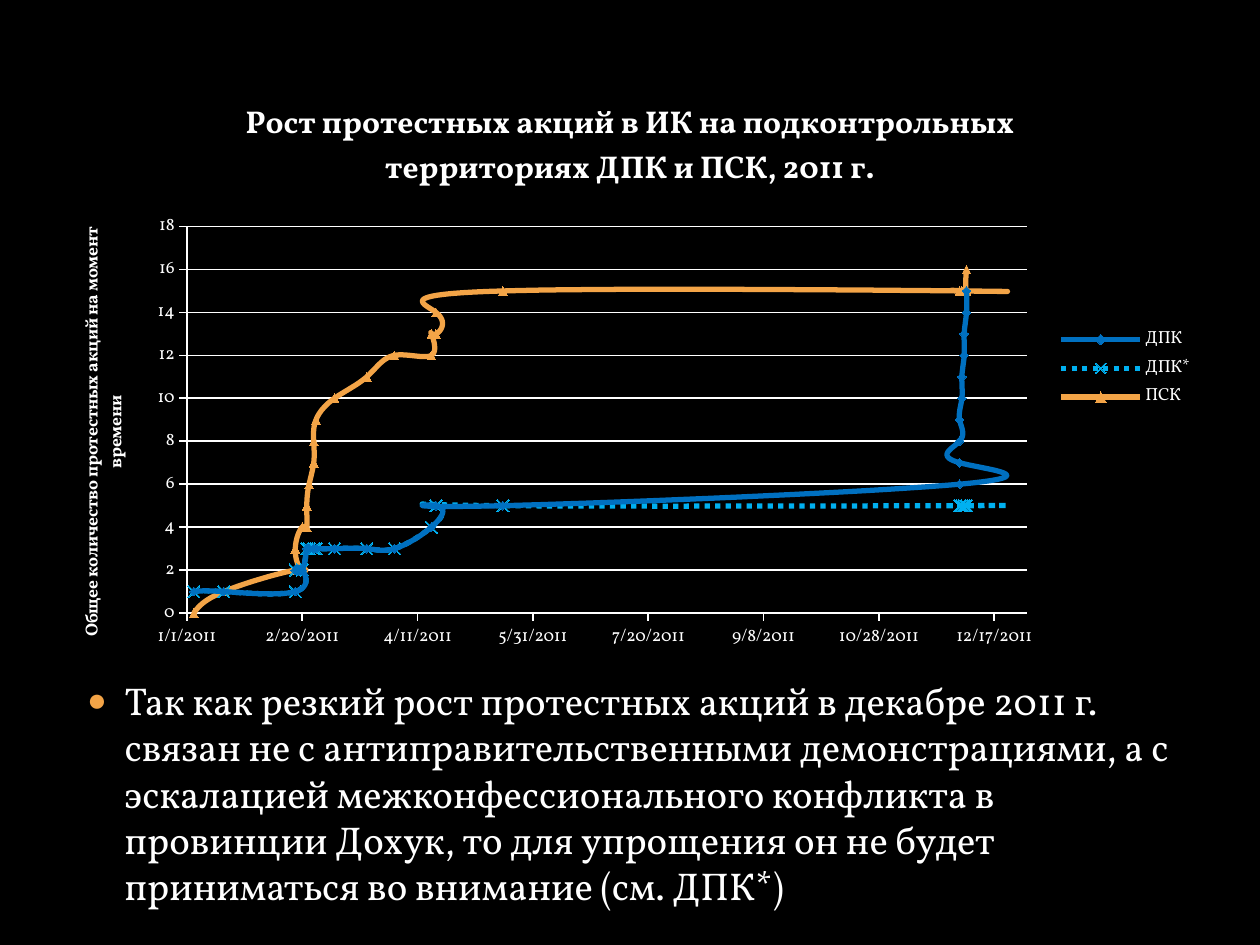
from lxml import etree
from pptx import Presentation
from pptx.chart.data import XyChartData
from pptx.dml.color import RGBColor
from pptx.enum.chart import (XL_CHART_TYPE as ChartType, XL_LEGEND_POSITION as LegendPosition,
                             XL_MARKER_STYLE as Marker, XL_TICK_MARK as TickMark)
from pptx.enum.dml import MSO_LINE as Dash
from pptx.enum.text import MSO_ANCHOR as Anchor, MSO_AUTO_SIZE as AutoSize
from pptx.oxml import parse_xml
from pptx.oxml.ns import nsdecls, qn
from pptx.util import Cm, Pt

# Content
FONT = "Vollkorn"
COLORS = {"background": "000000", "text": "FFFFFF", "kdp": "0070C0",
          "kdp_flat": "00B0F0", "puk": "F3A447"}
CHART_TITLE = "Рост протестных акций в ИК на подконтрольных территориях ДПК и ПСК, 2011 г."
AXIS_TITLE = "Общее количество протестных акций на момент времени"
COMMENT = ("Так как резкий рост протестных акций в декабре 2011 г. связан не с "
           "антиправительственными демонстрациями, а с эскалацией межконфессионального "
           "конфликта в провинции Дохук, то для упрощения он не будет приниматься "
           "во внимание (см. ДПК*)")

FIRST_DAY, LAST_DAY = 40544, 40908  # date serials within 2011
DAYS = [3, 16, 47, 50, 47, 50, 52, 52, 53, 55, 55, 56, 64, 78, 90, 106, 106, 108, 108, 137,
        335, 335, 335, 335, 336, 336, 337, 337, 338, 338, 338]
KDP_START = [1] * 3 + [2] * 3 + [3] * 9 + [4] * 2 + [5] * 3
SERIES = [  # name, values, colour, dash, marker, marker size
    ("ДПК", KDP_START + [6, 7, 8, 9, 10, 11, 12, 13, 14, 14, 15],
     "kdp", Dash.SOLID, Marker.DIAMOND, 5),
    ("ДПК*", KDP_START + [5] * 11, "kdp_flat", Dash.ROUND_DOT, Marker.X, 7),
    ("ПСК", [0, 1, 2, 2, 3, 4, 4, 5, 6, 7, 8, 9, 10, 11, 12, 12, 13, 13, 14] + [15] * 10 + [16] * 2,
     "puk", Dash.SOLID, Marker.TRIANGLE, 5),
]
PLOT_PERCENT = {"x": 11.53, "y": 25.8, "w": 72.9, "h": 66}


def color(name):
    return RGBColor.from_string(COLORS[name])


def style_font(font, size, bold=False):
    font.name, font.size, font.bold = FONT, Pt(size), bold
    font.color.rgb = color("text")


def style_line(line, name, width):
    line.color.rgb = color(name)
    line.width = Pt(width)


def set_title(owner, text, size):
    text_frame = owner.text_frame
    text_frame.text = text
    style_font(text_frame.paragraphs[0].runs[0].font, size, bold=True)


def place_plot_area(chart):
    plot_area = chart.plots[0]._element.getparent()
    for layout in plot_area.findall(qn("c:layout")):
        plot_area.remove(layout)
    modes = '<c:layoutTarget val="inner"/><c:xMode val="edge"/><c:yMode val="edge"/>'
    sizes = "".join(f'<c:{key} val="{value / 100}"/>' for key, value in PLOT_PERCENT.items())
    plot_area.insert(0, parse_xml(
        f'<c:layout {nsdecls("c")}><c:manualLayout>{modes}{sizes}</c:manualLayout></c:layout>'))


def add_protest_chart(slide):
    data = XyChartData()
    for name, values, *_ in SERIES:
        series = data.add_series(name)
        for day, value in zip(DAYS, values):
            series.add_data_point(FIRST_DAY + day, value)
    chart = slide.shapes.add_chart(ChartType.XY_SCATTER_SMOOTH, Cm(1.09), Cm(1.52),
                                   Cm(23.22), Cm(11.81), data).chart
    style_font(chart.font, 10)
    chart.has_title = True
    set_title(chart.chart_title, CHART_TITLE, 18)
    chart.chart_title.include_in_layout = False
    chart.has_legend = True
    chart.legend.position = LegendPosition.RIGHT
    chart.legend.include_in_layout = False
    chart.plots[0].vary_by_categories = False

    # Axes
    date_axis, count_axis = chart.category_axis, chart.value_axis
    for axis, low, high, step in ((date_axis, FIRST_DAY, LAST_DAY, 50), (count_axis, 0, 18, 2)):
        axis.minimum_scale, axis.maximum_scale, axis.major_unit = low, high, step
        axis.major_tick_mark, axis.minor_tick_mark = TickMark.OUTSIDE, TickMark.NONE
        style_line(axis.format.line, "text", 1)
        style_font(axis.tick_labels.font, 10)
    date_axis.has_major_gridlines = False
    date_axis.tick_labels.number_format = "m/d/yyyy"
    date_axis.tick_labels.number_format_is_linked = False
    count_axis.has_major_gridlines = True
    style_line(count_axis.major_gridlines.format.line, "text", 1)
    set_title(count_axis.axis_title, AXIS_TITLE, 10)
    place_plot_area(chart)

    # Series
    for series, (_, _, name, dash, marker, size) in zip(chart.plots[0].series, SERIES):
        series._element.get_or_add_smooth().val = True
        style_line(series.format.line, name, 3)
        series.format.line.dash_style = dash
        series.marker.style, series.marker.size = marker, size
        style_line(series.marker.format.line, name, 0.75)
        if marker != Marker.X:
            series.marker.format.fill.solid()
            series.marker.format.fill.fore_color.rgb = color(name)


def fill_comment(body):
    body.left, body.top, body.width, body.height = Cm(1.5), Cm(13.51), Cm(22.63), Cm(4.6)
    text_frame = body.text_frame
    text_frame.text = COMMENT
    text_frame.word_wrap = True
    text_frame.auto_size = AutoSize.NONE
    text_frame.vertical_anchor = Anchor.TOP
    paragraph = text_frame.paragraphs[0]
    paragraph.space_before = Pt(6)
    paragraph.line_spacing = 1.0
    style_font(paragraph.runs[0].font, 22.1)

    # Bullet with a hanging indent
    properties = paragraph._p.get_or_add_pPr()
    properties.set("marL", str(Cm(0.76)))
    properties.set("indent", str(-Cm(0.76)))
    bullet_color = etree.SubElement(properties, qn("a:buClr"))
    etree.SubElement(bullet_color, qn("a:srgbClr"), val=COLORS["puk"])
    etree.SubElement(properties, qn("a:buSzPct"), val="85000")
    etree.SubElement(properties, qn("a:buChar"), char="●")


def main():
    presentation = Presentation()
    presentation.slide_width, presentation.slide_height = Cm(25.4), Cm(19.05)
    slide = presentation.slides.add_slide(presentation.slide_layouts.get_by_name("Title and Content"))
    slide.background.fill.solid()
    slide.background.fill.fore_color.rgb = color("background")
    title = slide.shapes.title._element
    title.getparent().remove(title)
    add_protest_chart(slide)
    fill_comment(slide.placeholders[1])
    presentation.save("out.pptx")


if __name__ == "__main__":
    main()
